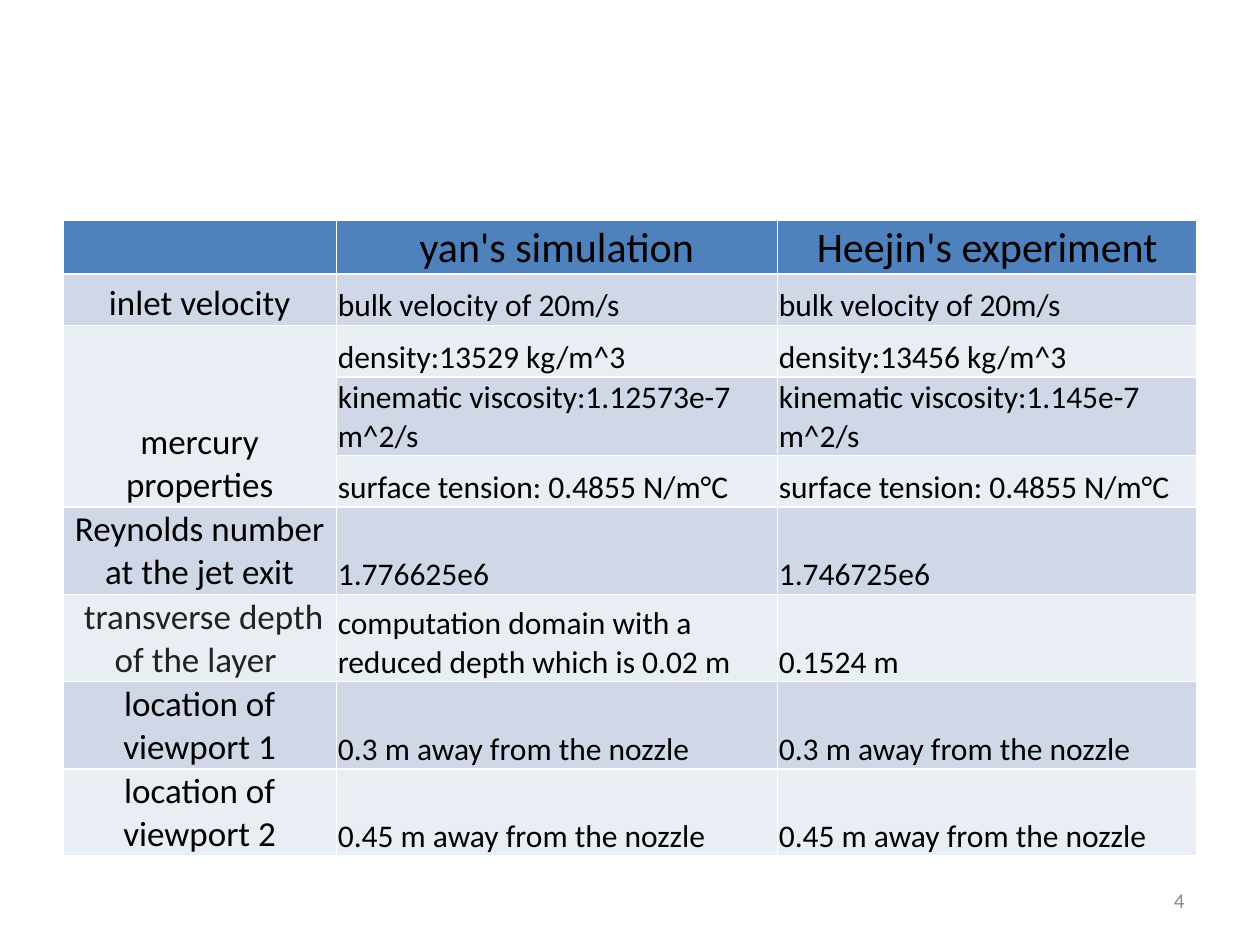
import pptx
import pptx.util
import pptx.dml.color
import pptx.enum.text

Cm = pptx.util.Cm
ALIGN = pptx.enum.text.PP_ALIGN
ANCHOR = pptx.enum.text.MSO_ANCHOR

HEADS = ["", "yan's simulation", "Heejin's experiment"]
ROWS = [
    ("inlet velocity", "bulk velocity of 20m/s", "bulk velocity of 20m/s"),
    ("mercury properties", "density:13529 kg/m^3", "density:13456 kg/m^3"),
    ("", "kinematic viscosity:1.12573e-7 m^2/s",
     "kinematic viscosity:1.145e-7 m^2/s"),
    ("", "surface tension: 0.4855 N/m°C", "surface tension: 0.4855 N/m°C"),
    ("Reynolds number at the jet exit", "1.776625e6", "1.746725e6"),
    (" transverse depth of the layer ",
     "computation domain with a reduced depth which is 0.02 m", "0.1524 m"),
    ("location of viewport 1", "0.3 m away from the nozzle",
     "0.3 m away from the nozzle"),
    ("location of viewport 2", "0.45 m away from the nozzle",
     "0.45 m away from the nozzle"),
]
MERGE = (2, 4)  # first and last table row under "mercury properties"
DEPTH = 6       # table row whose label is dark grey
WIDTHS = [5.51, 8.89, 8.46]
HEAD_H, ROW_H = 1.07, 1.04
COLORS = {"head": "4F81BD", "odd": "D0D8E8", "even": "E9EDF4",
          "text": "000000", "dark": "222222", "page": "8C8C8C"}


def write(frame, text, size=18, color="text", align=ALIGN.LEFT):
    para = frame.paragraphs[0]
    para.alignment = align
    run = para.add_run()
    run.text = text
    font = run.font
    font.name, font.size, font.bold = "Calibri", pptx.util.Pt(size), False
    font.color.rgb = pptx.dml.color.RGBColor.from_string(COLORS[color])


def style(row, col):
    """Text format of a table cell: header, row label or value."""
    if row == 0:
        return {"size": 24, "align": ALIGN.CENTER}
    if col == 0:
        color = "dark" if row == DEPTH else "text"
        return {"size": 20, "align": ALIGN.CENTER, "color": color}
    return {}


def fill_cell(cell, text, row, col):
    shade = "head" if row == 0 else "odd" if row % 2 else "even"
    cell.fill.solid()
    cell.fill.fore_color.rgb = pptx.dml.color.RGBColor.from_string(COLORS[shade])
    if text:
        cell.margin_left = cell.margin_right = cell.margin_top = Cm(0.03)
        cell.margin_bottom = 0
        cell.vertical_anchor = ANCHOR.BOTTOM
        write(cell.text_frame, text, **style(row, col))


def add_grid(slide):
    data = [HEADS, *ROWS]
    grid = slide.shapes.add_table(
        len(data), len(HEADS), Cm(1.27), Cm(4.45), Cm(sum(WIDTHS)),
        Cm(HEAD_H + ROW_H * len(ROWS))).table
    for col, width in zip(grid.columns, WIDTHS):
        col.width = Cm(width)
    for i, row in enumerate(grid.rows):
        row.height = Cm(ROW_H if i else HEAD_H)
    first, last = MERGE
    grid.cell(first, 0).merge(grid.cell(last, 0))
    for i, texts in enumerate(data):
        for j, text in enumerate(texts):
            fill_cell(grid.cell(i, j), text, i, j)


def add_page(slide, text):
    box = slide.shapes.add_textbox(Cm(18.2), Cm(17.65), Cm(5.93), Cm(1.01))
    frame = box.text_frame
    frame.word_wrap = True
    frame.vertical_anchor = ANCHOR.MIDDLE
    write(frame, text, size=12, color="page", align=ALIGN.RIGHT)


def main():
    deck = pptx.Presentation()
    deck.slide_width, deck.slide_height = Cm(25.4), Cm(19.05)
    slide = deck.slides.add_slide(deck.slide_layouts[6])
    add_grid(slide)
    add_page(slide, "4")
    deck.save("out.pptx")


if __name__ == "__main__":
    main()
